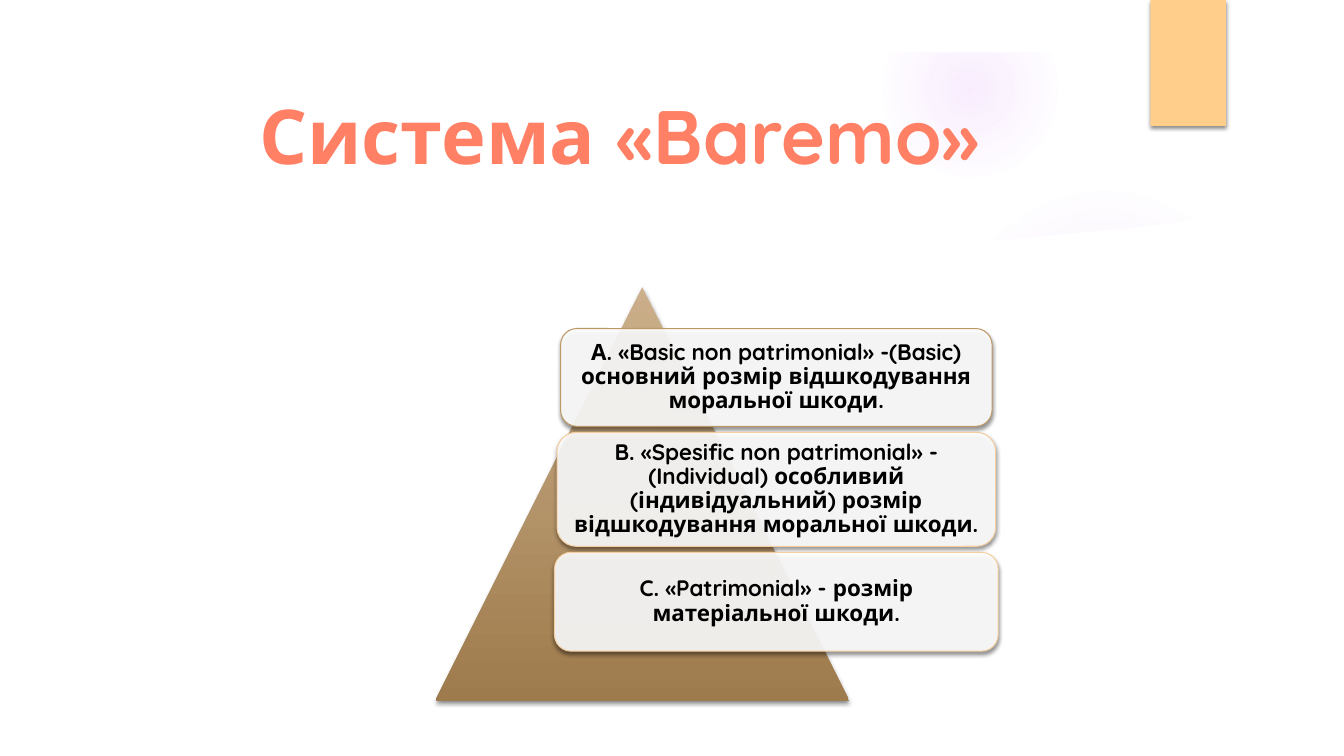
import pptx
import pptx.util
import pptx.dml.color
import pptx.enum.shapes
import pptx.enum.text
import pptx.oxml
import pptx.oxml.ns

Inches = pptx.util.Inches
Pt = pptx.util.Pt
qn = pptx.oxml.ns.qn
Preset = pptx.enum.shapes.MSO_SHAPE
A_NS = pptx.oxml.ns.nsdecls("a")

FONT = "Quicksand"
GLOW = "D17DF9"
CARDS = [
    (4.28, 0.97, "BD9867",
     "А. «Basic non patrimonial» -(Basic) основний розмір відшкодування моральної шкоди."),
    (4.35, 1.13, "F4CEA0",
     "B. «Spesific non patrimonial» -(Individual) особливий (індивідуальний) розмір "
     "відшкодування моральної шкоди."),
    (4.4, 0.98, "F4CEA0",
     "C. «Patrimonial» - розмір матеріальної шкоди."),
]
WAVE = [(0.5, 2.04), (0.5, 7), (12.84, 7), (12.84, 2.04), (12.28, 2.13), (11.72, 2.2),
        (11.16, 2.27), (10.6, 2.32), (10.04, 2.37), (9.49, 2.41), (8.4, 2.46),
        (7.08, 2.48), (5.59, 2.46), (4.01, 2.38), (2.49, 2.27), (1.35, 2.15)]


def rgb(hex_colour):
    return pptx.dml.color.RGBColor.from_string(hex_colour)


def paint(shape, colour=None, alpha=100, line=None):
    """Set a flat fill, an optional outline, and no theme shadow."""
    shape.shadow.inherit = False
    if colour:
        shape.fill.solid()
        shape.fill.fore_color.rgb = rgb(colour)
        if alpha < 100:
            tint = shape._element.spPr.find(qn("a:solidFill"))[0]
            tint.append(pptx.oxml.parse_xml(f'<a:alpha {A_NS} val="{alpha * 1000}"/>'))
    if line:
        shape.line.color.rgb = rgb(line)
        shape.line.width = Pt(0.75)
    else:
        shape.line.fill.background()


def paint_gradient(shape, stops, radial=False):
    """Fill with (position, colour, alpha) stops, top-down or from the centre."""
    paint(shape)
    shape.fill.gradient()
    gradient = shape._element.spPr.find(qn("a:gradFill"))
    gradient.clear()
    stop_xml = "".join(
        f'<a:gs pos="{position * 1000}"><a:srgbClr val="{colour}">'
        f'<a:alpha val="{alpha * 1000}"/></a:srgbClr></a:gs>'
        for position, colour, alpha in stops)
    gradient.append(pptx.oxml.parse_xml(f"<a:gsLst {A_NS}>{stop_xml}</a:gsLst>"))
    if radial:
        direction = (f'<a:path {A_NS} path="circle">'
                     '<a:fillToRect l="50000" t="50000" r="50000" b="50000"/></a:path>')
    else:
        direction = f'<a:lin {A_NS} ang="5400000" scaled="0"/>'
    gradient.append(pptx.oxml.parse_xml(direction))


def cast_shadow(shape):
    effects = shape._element.spPr.find(qn("a:effectLst"))
    effects.append(pptx.oxml.parse_xml(
        f'<a:outerShdw {A_NS} blurRad="{Pt(3)}" dist="{Pt(2)}" dir="5400000" '
        'rotWithShape="0"><a:srgbClr val="000000"><a:alpha val="45000"/>'
        '</a:srgbClr></a:outerShdw>'))


def add_preset(slide, preset, left, top, width, height):
    return slide.shapes.add_shape(
        preset, Inches(left), Inches(top), Inches(width), Inches(height))


def write(shape, text, size, colour, inset=0.1, line_spacing=1.0):
    frame = shape.text_frame
    frame.word_wrap = True
    frame.auto_size = pptx.enum.text.MSO_AUTO_SIZE.NONE
    frame.vertical_anchor = pptx.enum.text.MSO_ANCHOR.MIDDLE
    frame.margin_left = frame.margin_right = Inches(inset)
    frame.margin_top = frame.margin_bottom = Inches(inset)
    paragraph = frame.paragraphs[0]
    paragraph.alignment = pptx.enum.text.PP_ALIGN.CENTER
    paragraph.line_spacing = line_spacing
    run = paragraph.add_run()
    run.text = text
    run.font.name = FONT
    run.font.size = Pt(size)
    run.font.bold = True
    run.font.color.rgb = rgb(colour)


def add_glow(slide, left, top, diameter, stops):
    glow = add_preset(slide, Preset.OVAL, left, top, diameter, diameter)
    paint_gradient(glow, [(position, GLOW, alpha) for position, alpha in stops], radial=True)


def add_backdrop(slide, width, height):
    """Two glows, cut off by a white wave and a white border, and a corner tab."""
    add_glow(slide, 9.41, 1.83, 3.08, [(0, 7), (36, 6), (69, 0), (100, 0)])
    add_glow(slide, 8.75, 0.01, 1.75, [(0, 14), (36, 7), (73, 0), (100, 0)])

    points = [(Inches(x), Inches(y)) for x, y in WAVE]
    outline = slide.shapes.build_freeform(*points[0])
    outline.add_line_segments(points[1:], close=True)
    paint(outline.convert_to_shape(), "FFFFFF")

    border = add_preset(slide, Preset.FRAME, 0, 0, width, height)
    border.adjustments[0] = 0.52 / height
    paint(border, "FFFFFF")

    tab = add_preset(slide, Preset.RECTANGLE, width - 1.92, 0, 0.75, 1.25)
    paint(tab, "FFCE8B")
    cast_shadow(tab)


def add_title(slide, left, top, width, height):
    title = slide.shapes.title
    title.left, title.top = Inches(left), Inches(top)
    title.width, title.height = Inches(width), Inches(height)
    write(title, "Система «Baremo»", size=54, colour="FF8064", inset=0)
    slide.shapes._spTree.append(title._element)


def add_pyramid(slide, left, top, side):
    """A pyramid with a stack of cards centred over its right half."""
    pyramid = add_preset(slide, Preset.ISOSCELES_TRIANGLE, left, top, side, side)
    paint_gradient(pyramid, [(0, "CBAF8A", 100), (100, "9E7B4C", 100)])
    cast_shadow(pyramid)

    centre = left + 3.38
    card_top = top + side / 10
    for width, height, outline, text in CARDS:
        card = add_preset(slide, Preset.ROUNDED_RECTANGLE,
                          centre - width / 2, card_top, width, height)
        paint(card, "FFFFFF", alpha=90, line=outline)
        cast_shadow(card)
        write(card, text, size=16, colour="000000", inset=0.07, line_spacing=0.9)
        card_top += height + 0.06


def main():
    deck = pptx.Presentation()
    width, height = 13.33, 7.5
    deck.slide_width, deck.slide_height = Inches(width), Inches(height)
    slide = deck.slides.add_slide(deck.slide_layouts[5])
    slide.background.fill.solid()
    slide.background.fill.fore_color.rgb = rgb("FFFFFF")
    add_backdrop(slide, width, height)
    add_title(slide, 1.35, 0.95, 9.58, 0.77)
    add_pyramid(slide, 4.32, 2.85, 4.1)
    deck.save("out.pptx")


if __name__ == "__main__":
    main()
